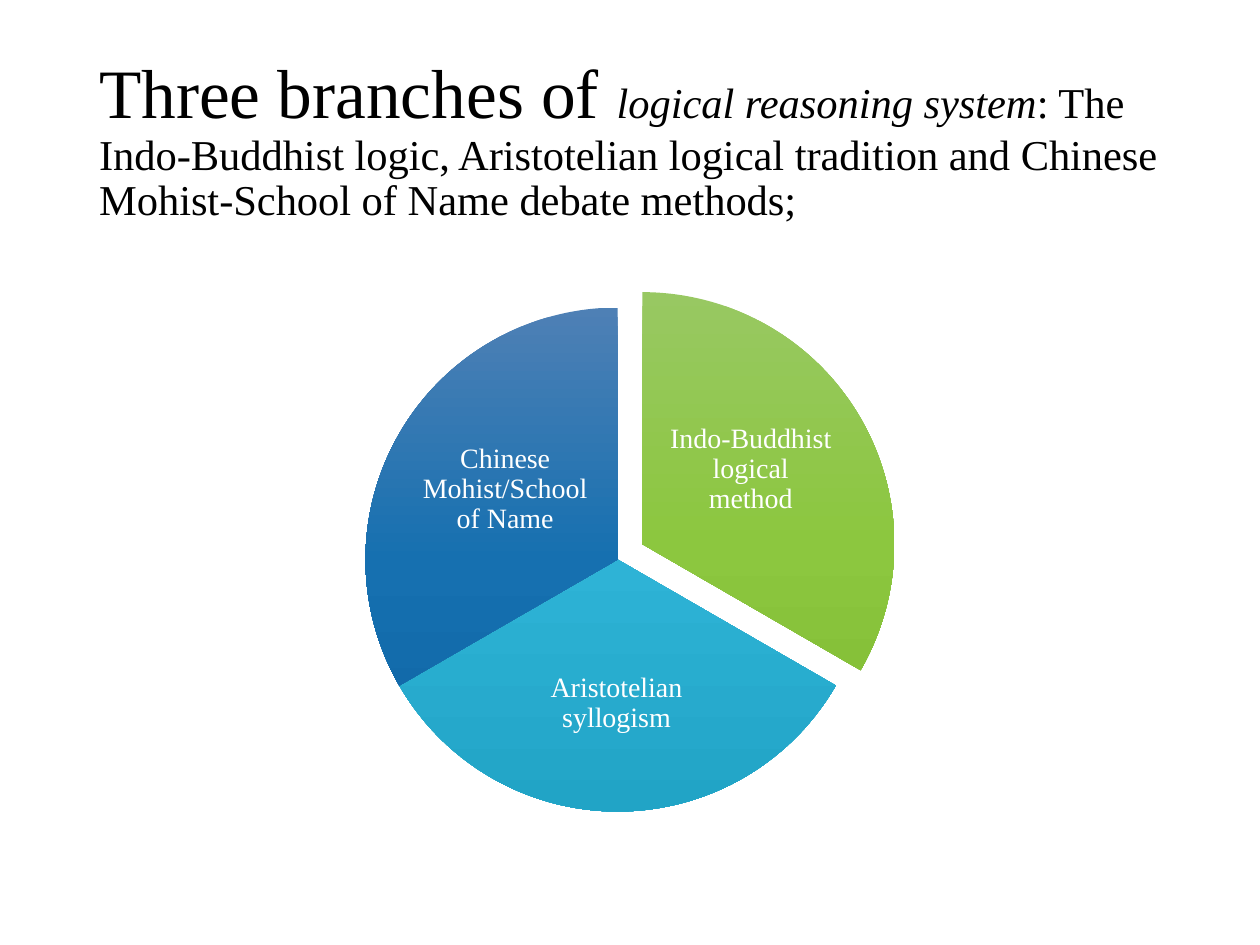
from dataclasses import dataclass

from lxml.etree import SubElement
from pptx import Presentation
from pptx.dml.color import RGBColor
from pptx.enum.shapes import MSO_SHAPE as Shape
from pptx.enum.text import MSO_ANCHOR as Anchor, PP_ALIGN as Align
from pptx.oxml.ns import qn
from pptx.slide import Slide
from pptx.util import Cm, Pt


@dataclass(frozen=True)
class Theme:
    font: str = "Times New Roman"
    ink: str = "000000"
    label: str = "FFFFFF"
    green: tuple[str, ...] = ("98C862", "8CC73F", "7DB831")
    teal: tuple[str, ...] = ("59B8D4", "2EB3D6", "21A4C6")
    blue: tuple[str, ...] = ("4E80B5", "1670B0", "0D65A3")
    lead_size: float = 39.6
    title_size: float = 24.3
    label_size: float = 16


@dataclass(frozen=True)
class Run:
    text: str
    size: float
    italic: bool = False


@dataclass(frozen=True)
class Slice:
    label: str
    colors: tuple[str, ...]
    start: int
    left: float
    top: float
    label_area: tuple[float, float, float, float]


THEME = Theme()
DIAMETER = 10.16
SWEEP = 120
TITLE = (
    Run("Three branches of ", THEME.lead_size),
    Run("logical reasoning system", THEME.title_size, italic=True),
    Run(": The Indo-Buddhist logic, Aristotelian logical tradition and "
        "Chinese Mohist-School of Name debate methods;", THEME.title_size),
)
SLICES = (
    Slice("Indo-Buddhist logical method", THEME.green, 270, 7.87, 5.89,
          (13.41, 7.77, 3.45, 3.38)),
    Slice("Aristotelian syllogism", THEME.teal, 30, 7.37, 6.2,
          (10.13, 12.6, 4.6, 3.15)),
    Slice("Chinese Mohist/School of Name", THEME.blue, 150, 7.37, 6.2,
          (8.46, 8.18, 3.45, 3.38)),
)


def add_text(slide: Slide, runs: tuple[Run, ...], *,
             area: tuple[float, float, float, float], color: str,
             align: Align = Align.LEFT,
             insets: tuple[float, float] = (0.25, 0.13)) -> None:
    box = slide.shapes.add_textbox(*map(Cm, area))
    frame = box.text_frame
    frame.word_wrap = True
    frame.vertical_anchor = Anchor.MIDDLE
    frame.margin_left = frame.margin_right = Cm(insets[0])
    frame.margin_top = frame.margin_bottom = Cm(insets[1])
    para = frame.paragraphs[0]
    para.alignment = align
    para.line_spacing = 0.9
    for run in runs:
        span = para.add_run()
        span.text = run.text
        span.font.name = THEME.font
        span.font.size = Pt(run.size)
        span.font.italic = run.italic
        span.font.color.rgb = RGBColor.from_string(color)


def add_slice(slide: Slide, part: Slice) -> None:
    pie = slide.shapes.add_shape(Shape.PIE, Cm(part.left), Cm(part.top),
                                 Cm(DIAMETER), Cm(DIAMETER))
    pie.shadow.inherit = False
    pie.line.fill.background()
    end = (part.start + SWEEP) % 360
    for index, angle in enumerate((part.start, end)):
        pie.adjustments[index] = angle * 0.6
    pie.fill.gradient()
    pie.fill.gradient_angle = 270
    stops = pie.fill._fill._gradFill.find(qn("a:gsLst"))
    for stop in list(stops):
        stops.remove(stop)
    for index, color in enumerate(part.colors):
        stop = SubElement(stops, qn("a:gs"), pos=str(index * 50000))
        SubElement(stop, qn("a:srgbClr"), val=color)
    add_text(slide, (Run(part.label, THEME.label_size),), area=part.label_area,
             color=THEME.label, align=Align.CENTER, insets=(0.05, 0.05))


def main() -> None:
    """Build the slide on the three branches of logical reasoning."""
    deck = Presentation()
    deck.slide_width, deck.slide_height = Cm(25.4), Cm(19.05)
    page = deck.slides.add_slide(deck.slide_layouts[6])
    add_text(page, TITLE, area=(1.75, 1.02, 21.9, 3.68), color=THEME.ink)
    for part in SLICES:
        add_slice(page, part)
    deck.save("out.pptx")


if __name__ == "__main__":
    main()
